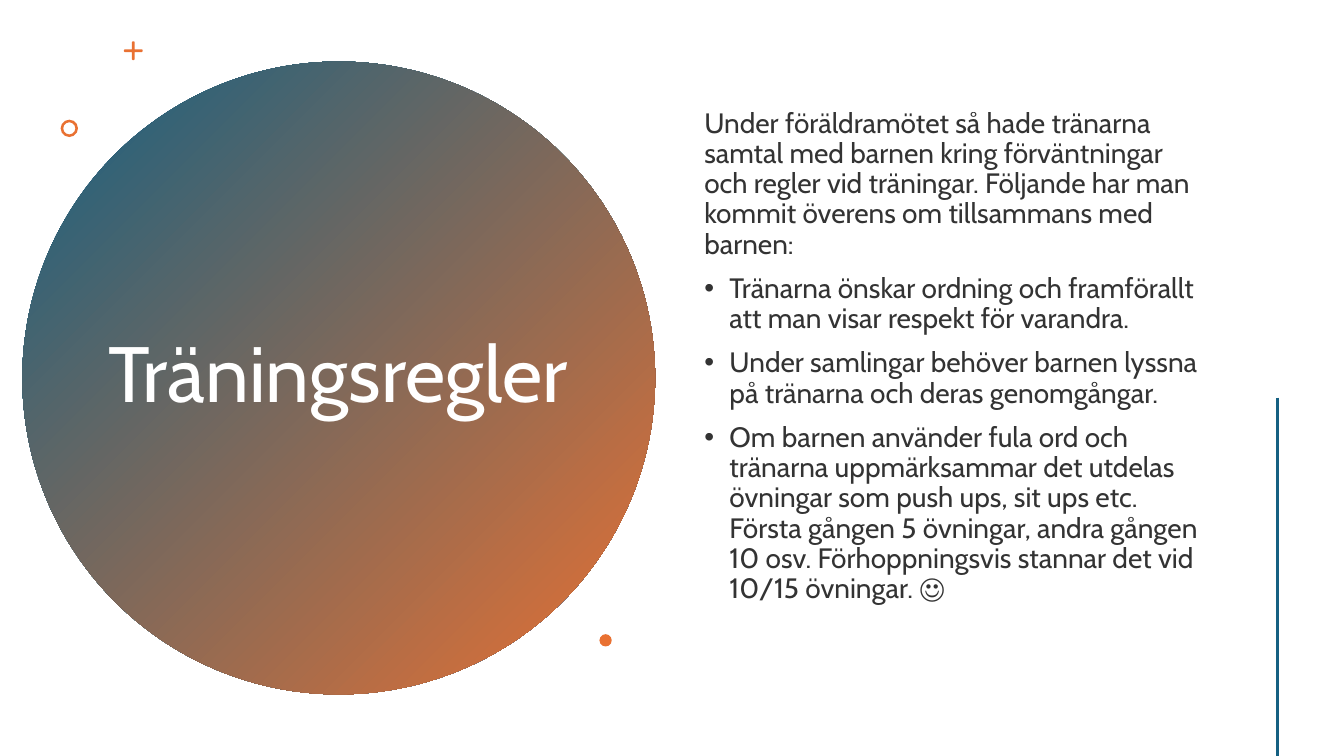
import math
from dataclasses import dataclass

from lxml import etree
from pptx import Presentation
from pptx.dml.color import RGBColor
from pptx.enum import shapes, text
from pptx.oxml import ns
from pptx.util import Pt


@dataclass(frozen=True)
class Theme:
    blue: RGBColor = RGBColor(0x15, 0x60, 0x82)
    orange: RGBColor = RGBColor(0xE9, 0x71, 0x32)
    white: RGBColor = RGBColor(0xFF, 0xFF, 0xFF)
    black: RGBColor = RGBColor(0, 0, 0)
    body_opacity: int = 80
    font: str = "Cabin"
    title_size: int = 56
    body_size: int = 20


@dataclass(frozen=True)
class Box:
    left: float
    top: float
    width: float
    height: float

    def inner(self, left, top, width, height):
        return Box(self.left + left, self.top + top, width, height)

    def lengths(self):
        return [Pt(n) for n in (self.left, self.top, self.width, self.height)]


THEME = Theme()
TITLE = "Träningsregler"
INTRO = (
    "Under föräldramötet så hade tränarna samtal med barnen kring förväntningar "
    "och regler vid träningar. Följande har man kommit överens om tillsammans med barnen:"
)
RULES = [
    "Tränarna önskar ordning och framförallt att man visar respekt för varandra.",
    "Under samlingar behöver barnen lyssna på tränarna och deras genomgångar.",
    "Om barnen använder fula ord och tränarna uppmärksammar det utdelas övningar "
    "som push ups, sit ups etc. Första gången 5 övningar, andra gången 10 osv. "
    "Förhoppningsvis stannar det vid 10/15 övningar. ☺",
]


def add_plain_shape(page, kind, box):
    shape = page.shapes.add_shape(kind, *box.lengths())
    shape.shadow.inherit = False
    shape.line.fill.background()
    return shape


def paint(shape, color):
    shape.fill.solid()
    shape.fill.fore_color.rgb = color


def add_text_frame(page, box):
    frame = page.shapes.add_textbox(*box.lengths()).text_frame
    frame.word_wrap = True
    frame.vertical_anchor = text.MSO_ANCHOR.MIDDLE
    return frame


def style_paragraph(para, size, color):
    para.line_spacing = 0.9
    para.font.name = THEME.font
    para.font.size = Pt(size)
    para.font.color.rgb = color


def add_plus(page, box, thickness):
    radius = thickness / 2
    reach = box.width / 2 - radius
    center_x, center_y = box.left + box.width / 2, box.top + box.height / 2
    points = []
    for arm in range(4):
        turn = math.radians(90 * arm)
        outline = [(radius, -radius)]
        for degrees in range(-90, 91, 15):
            angle = math.radians(degrees)
            outline.append((reach + radius * math.cos(angle), radius * math.sin(angle)))
        for x, y in outline:
            points.append((
                Pt(center_x + x * math.cos(turn) - y * math.sin(turn)),
                Pt(center_y + x * math.sin(turn) + y * math.cos(turn)),
            ))
    builder = page.shapes.build_freeform(*points[0])
    builder.add_line_segments(points[1:], close=True)
    plus = builder.convert_to_shape()
    plus.shadow.inherit = False
    plus.line.fill.background()
    paint(plus, THEME.orange)


def add_title_disc(page, box):
    disc = add_plain_shape(page, shapes.MSO_SHAPE.OVAL, box.inner(16, 44, 452, 452))
    disc.fill.gradient()
    disc.fill.gradient_angle = 315
    stops = zip(disc.fill.gradient_stops, (THEME.blue, THEME.orange), (0, 1))
    for stop, color, position in stops:
        stop.color.rgb = color
        stop.position = position

    para = add_text_frame(page, box.inner(55.5, 101.5, 372, 336)).paragraphs[0]
    para.text = TITLE
    para.alignment = text.PP_ALIGN.CENTER
    style_paragraph(para, THEME.title_size, THEME.white)

    add_plus(page, box.inner(88.5, 29.5, 13.5, 13.5), 2)
    ring = add_plain_shape(page, shapes.MSO_SHAPE.DONUT, box.inner(43.3, 85.5, 12.4, 12.4))
    ring.adjustments[0] = 0.15
    paint(ring, THEME.orange)
    dot = add_plain_shape(page, shapes.MSO_SHAPE.OVAL, box.inner(428.2, 453, 8.8, 8.8))
    paint(dot, THEME.orange)


def add_bullet(para):
    properties = para._p.get_or_add_pPr()
    properties.set("marL", str(Pt(18)))
    properties.set("indent", str(-Pt(18)))
    font = etree.Element(ns.qn("a:buFont"), typeface="Arial")
    mark = etree.Element(ns.qn("a:buChar"), char="•")
    defaults = properties.find(ns.qn("a:defRPr"))
    defaults.addprevious(font)
    defaults.addprevious(mark)


def add_rules(page, box):
    frame = add_text_frame(page, box)
    frame.margin_bottom = Pt(35.2)
    for index, wording in enumerate([INTRO, *RULES]):
        para = frame.add_paragraph() if index else frame.paragraphs[0]
        para.text = wording
        para.space_before = Pt(10)
        style_paragraph(para, THEME.body_size, THEME.black)
        for color in para._p.iter(ns.qn("a:srgbClr")):
            etree.SubElement(color, ns.qn("a:alpha"), val=str(THEME.body_opacity * 1000))
        if index:
            add_bullet(para)


def add_side_line(page, box):
    line = page.shapes.add_connector(
        shapes.MSO_CONNECTOR.STRAIGHT,
        Pt(box.left), Pt(box.top), Pt(box.left), Pt(box.top + box.height),
    )
    line.line.color.rgb = THEME.blue
    line.line.width = Pt(2)
    etree.SubElement(line._element.spPr, ns.qn("a:effectLst"))


def main():
    deck = Presentation()
    deck.slide_width, deck.slide_height = Pt(960), Pt(540)
    page = deck.slides.add_slide(deck.slide_layouts[6])
    add_title_disc(page, Box(0, 0, 480, 540))
    add_rules(page, Box(496, 41, 376, 459.4))
    add_side_line(page, Box(912.3, 284, 0, 256))
    deck.save("out.pptx")


if __name__ == "__main__":
    main()
